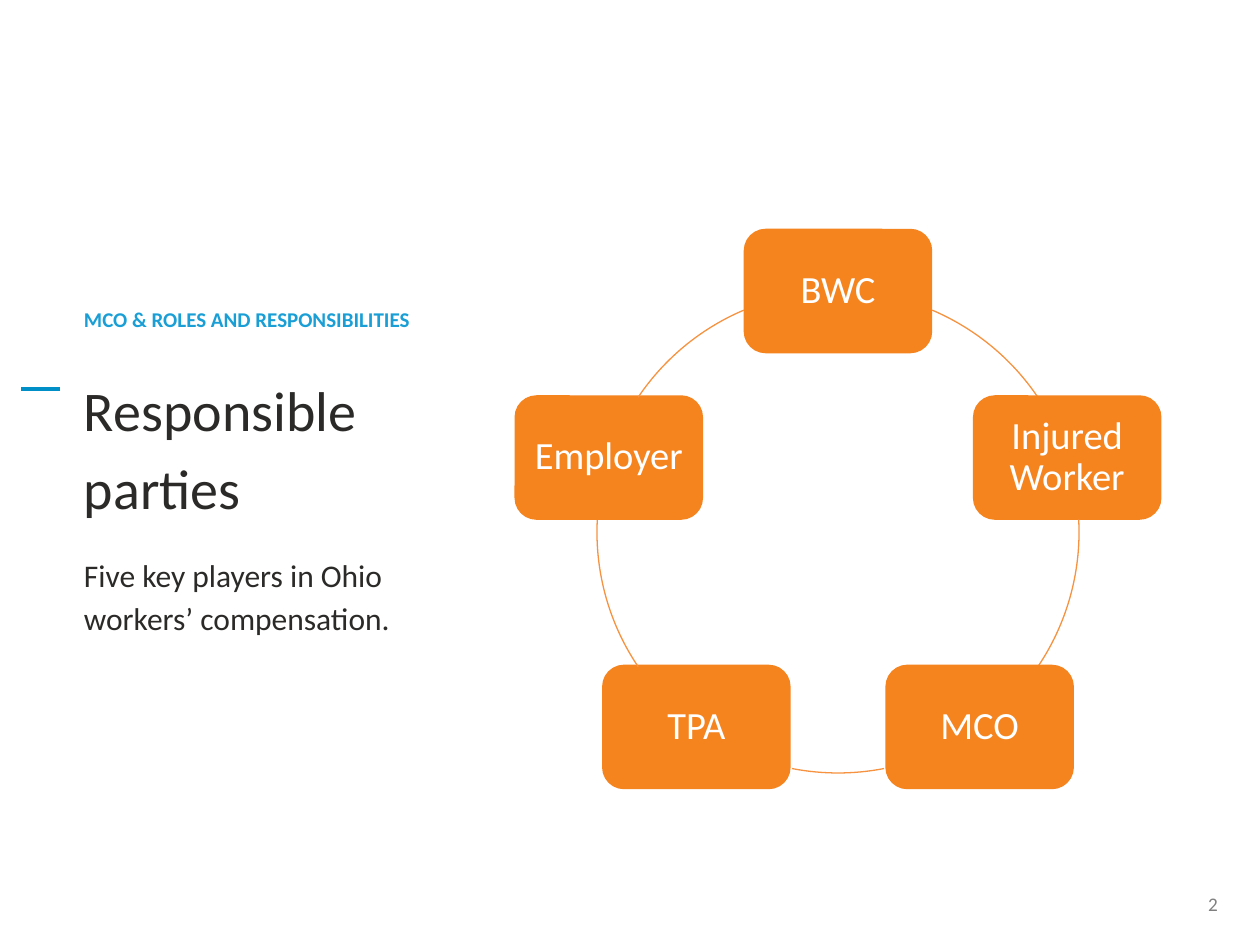
from math import cos, radians, sin

from lxml.etree import SubElement
from pptx import Presentation
from pptx.dml.color import RGBColor
from pptx.enum.shapes import MSO_CONNECTOR, MSO_SHAPE
from pptx.enum.text import MSO_ANCHOR as Anchor, PP_ALIGN as Align
from pptx.oxml.ns import qn
from pptx.util import Pt

PX = 914400 / 126
FONT = "Calibri"
ORANGE = RGBColor(0xF5, 0x84, 0x1F)
ARC_ORANGE = RGBColor(0xF6, 0x92, 0x40)
BLUE = RGBColor(0x19, 0x9F, 0xD6)
RULE_BLUE = RGBColor(0x01, 0x8F, 0xC8)
INK = RGBColor(0x2B, 0x2A, 0x28)
GREY = RGBColor(0x7F, 0x7F, 0x7F)
WHITE = RGBColor(0xFF, 0xFF, 0xFF)

PLAYERS = ["BWC", "Injured Worker", "MCO", "TPA", "Employer"]
ARC_SPANS = [(23, 56), (87, 124), (169, 191), (236, 273), (304, 337)]


def emu(*lengths):
    return [round(length * PX) for length in lengths]


def style(paragraph, size, color, bold=False, align=Align.LEFT):
    paragraph.alignment = align
    font = paragraph.font
    font.name, font.size, font.bold = FONT, Pt(size), bold
    font.color.rgb = color


def set_frame(frame, inset, anchor):
    frame.word_wrap = True
    frame.vertical_anchor = anchor
    inset, = emu(inset)
    frame.margin_left = frame.margin_right = inset
    frame.margin_top = frame.margin_bottom = inset


def add_text_frame(slide, box, anchor):
    frame = slide.shapes.add_textbox(*emu(*box)).text_frame
    set_frame(frame, 0, anchor)
    return frame


def add_heading(slide, left, top, width, height):
    frame = add_text_frame(slide, (left, top, width, height), Anchor.MIDDLE)
    eyebrow = frame.paragraphs[0]
    eyebrow.text = "MCO & ROLES AND RESPONSIBILITIES"
    style(eyebrow, 12, BLUE, bold=True)

    title = frame.add_paragraph()
    title.text = "Responsible\vparties"
    title.line_spacing = 1.15
    title.space_before = Pt(19.4)
    style(title, 32, INK)

    summary = frame.add_paragraph()
    summary.text = "Five key players in Ohio workers’ compensation."
    summary.line_spacing = 1.14
    summary.space_before, summary.space_after = Pt(17.6), Pt(8.8)
    style(summary, 18, INK)

    rule_y = top + 290
    rule = slide.shapes.add_connector(
        MSO_CONNECTOR.STRAIGHT, *emu(left - 24, rule_y, left - 63, rule_y))
    rule.line.color.rgb = RULE_BLUE
    rule.line.width = Pt(2.25)
    SubElement(rule._element.spPr, qn("a:effectLst"))


def add_arc(slide, box, start, end):
    arc = slide.shapes.add_shape(MSO_SHAPE.ARC, *emu(*box))
    arc.shadow.inherit = False
    arc.fill.background()
    arc.line.color.rgb = ARC_ORANGE
    arc.line.width = Pt(0.75)
    for index, angle in enumerate((start, end)):
        arc.adjustments[index] = (angle - 90) % 360 * 0.6


def add_node(slide, box, label):
    node = slide.shapes.add_shape(MSO_SHAPE.ROUNDED_RECTANGLE, *emu(*box))
    node.shadow.inherit = False
    node.fill.solid()
    node.fill.fore_color.rgb = ORANGE
    node.line.color.rgb = ORANGE
    node.line.width = Pt(2)
    set_frame(node.text_frame, 11, Anchor.MIDDLE)
    paragraph = node.text_frame.paragraphs[0]
    paragraph.text = label
    paragraph.line_spacing = 0.9
    style(paragraph, 22, WHITE, align=Align.CENTER)


def add_cycle(slide, left, top, diameter):
    node_width, node_height = 185, 121
    radius = diameter / 2
    step = 360 / len(PLAYERS)
    for index, (label, span) in enumerate(zip(PLAYERS, ARC_SPANS)):
        angle = radians(index * step)
        center_x = left + radius + radius * sin(angle)
        center_y = top + radius - radius * cos(angle)
        add_node(slide, (center_x - node_width / 2, center_y - node_height / 2,
                         node_width, node_height), label)
        add_arc(slide, (left, top, diameter, diameter), *span)


def add_page_number(slide, left, top, width, height):
    frame = add_text_frame(slide, (left, top, width, height), Anchor.TOP)
    paragraph = frame.paragraphs[0]
    paragraph.text = "2"
    style(paragraph, 11, GREY, align=Align.RIGHT)


def main():
    presentation = Presentation()
    presentation.slide_width, presentation.slide_height = emu(1260, 945)
    slide = presentation.slides.add_slide(presentation.slide_layouts[6])
    add_page_number(slide, 1165, 892, 53, 24)
    add_heading(slide, 84, 99, 364, 746)
    add_cycle(slide, 597, 291, 482)
    presentation.save("out.pptx")


if __name__ == "__main__":
    main()
